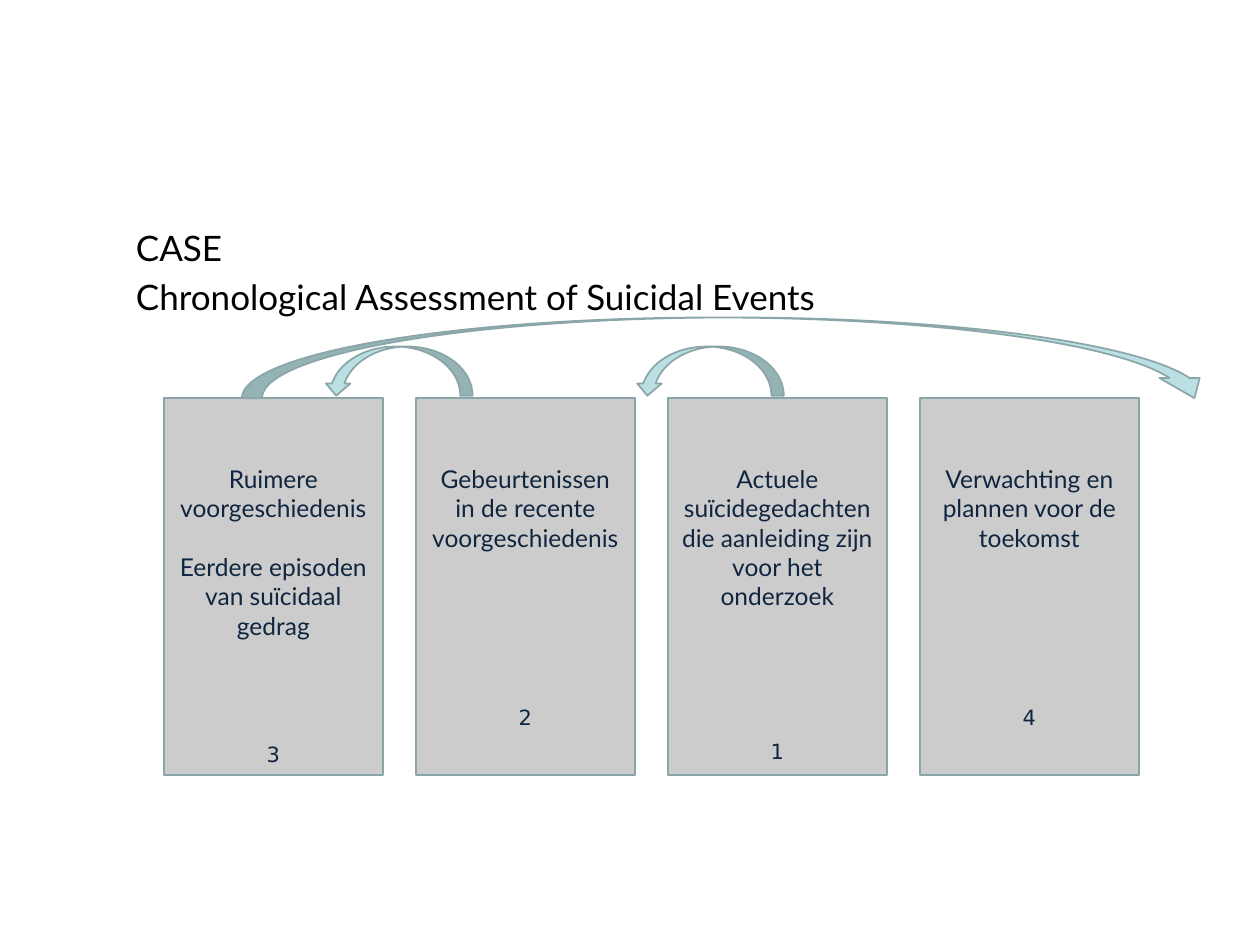
"""Build the CASE slide: four stages of the interview linked by curved arrows."""
from dataclasses import dataclass

import pptx
import pptx.dml.color
import pptx.enum.shapes
import pptx.enum.text
import pptx.shapes.autoshape
import pptx.slide
import pptx.util

COLUMNS, ROWS = 10, 7.5
CELL = pptx.util.Inches(1)
FIRST_COLUMN, COLUMN_STEP = 1.3, 2
STAGE_TOP, STAGE_WIDTH, STAGE_HEIGHT = 3.16, 1.74, 2.99
COLORS = {
    "title": "000000",
    "text": "10253F",
    "stage": "CCCCCC",
    "arrow": "BBE0E3",
    "line": "8AA6A8",
}
TEXT_FONT, NUMBER_FONT = "Lato", "DejaVu Sans"
Shape = pptx.enum.shapes.MSO_SHAPE
Align = pptx.enum.text.PP_ALIGN


@dataclass(frozen=True)
class Line:
    text: str
    size: float
    before: float = 0
    font: str = TEXT_FONT


@dataclass(frozen=True)
class Stage:
    number: str
    topics: tuple[str, ...]
    number_gap: float


@dataclass(frozen=True)
class Arrow:
    kind: Shape
    column: float
    row: float
    width: float
    height: float
    rotation: float = 0


TITLE = (
    Line("CASE", 20),
    Line("Chronological Assessment of Suicidal Events", 20, 4),
)
STAGES = (
    Stage("3", ("Ruimere voorgeschiedenis", "Eerdere episoden van suïcidaal gedrag"), 58),
    Stage("2", ("Gebeurtenissen in de recente voorgeschiedenis",), 87),
    Stage("1", ("Actuele suïcidegedachten die aanleiding zijn voor het onderzoek",), 73),
    Stage("4", ("Verwachting en plannen voor de toekomst",), 87),
)
ARROWS = (
    Arrow(Shape.CURVED_DOWN_ARROW, 1.92, 2.52, 7.72, 0.64),
    Arrow(Shape.CURVED_UP_ARROW, 5.04, 2.75, 1.18, 0.39, 180),
    Arrow(Shape.CURVED_UP_ARROW, 2.57, 2.75, 1.18, 0.39, 180),
)


def cells(*counts: float) -> list[int]:
    """Turn counts of grid cells into lengths."""
    return [round(count * CELL) for count in counts]


def rgb(name: str) -> pptx.dml.color.RGBColor:
    """Look up a colour by its role."""
    return pptx.dml.color.RGBColor.from_string(COLORS[name])


def write(
    box: pptx.shapes.autoshape.Shape, lines: tuple[Line, ...], color: str, align: Align
) -> None:
    """Fill a box with lines of text, from the top down."""
    frame = box.text_frame
    frame.word_wrap = True
    frame.vertical_anchor = pptx.enum.text.MSO_ANCHOR.TOP
    for index, line in enumerate(lines):
        para = frame.add_paragraph() if index else frame.paragraphs[0]
        para.text = line.text
        para.alignment = align
        para.space_before = pptx.util.Pt(line.before)
        para.font.name = line.font
        para.font.size = pptx.util.Pt(line.size)
        para.font.color.rgb = rgb(color)


def draw_shape(
    page: pptx.slide.Slide, kind: Shape, place: list[int], fill: str
) -> pptx.shapes.autoshape.Shape:
    """Draw an outlined preset shape."""
    shape = page.shapes.add_shape(kind, *place)
    shape.shadow.inherit = False
    shape.fill.solid()
    shape.fill.fore_color.rgb = rgb(fill)
    shape.line.color.rgb = rgb("line")
    shape.line.width = pptx.util.Pt(1)
    return shape


def draw_stage(page: pptx.slide.Slide, position: int, stage: Stage) -> None:
    """Draw one stage with its topics and its order number."""
    column = FIRST_COLUMN + position * COLUMN_STEP
    place = cells(column, STAGE_TOP, STAGE_WIDTH, STAGE_HEIGHT)
    box = draw_shape(page, Shape.RECTANGLE, place, "stage")
    box.text_frame.margin_top = pptx.util.Inches(0.52)
    topics = tuple(
        Line(topic, 14, 16.8 if index else 0) for index, topic in enumerate(stage.topics)
    )
    number = Line(stage.number, 12, stage.number_gap, NUMBER_FONT)
    write(box, (*topics, number), "text", Align.CENTER)


def draw_arrow(page: pptx.slide.Slide, arrow: Arrow) -> None:
    """Draw one curved arrow."""
    place = cells(arrow.column, arrow.row, arrow.width, arrow.height)
    draw_shape(page, arrow.kind, place, "arrow").rotation = arrow.rotation


def main() -> None:
    """Assemble and save the deck."""
    deck = pptx.Presentation()
    deck.slide_width, deck.slide_height = cells(COLUMNS, ROWS)
    page = deck.slides.add_slide(deck.slide_layouts[6])
    title = page.shapes.add_textbox(*cells(0.98, 1.75, 8.35, 4.52))
    write(title, TITLE, "title", Align.LEFT)
    for position, stage in enumerate(STAGES):
        draw_stage(page, position, stage)
    for arrow in ARROWS:
        draw_arrow(page, arrow)
    deck.save("out.pptx")


if __name__ == "__main__":
    main()
